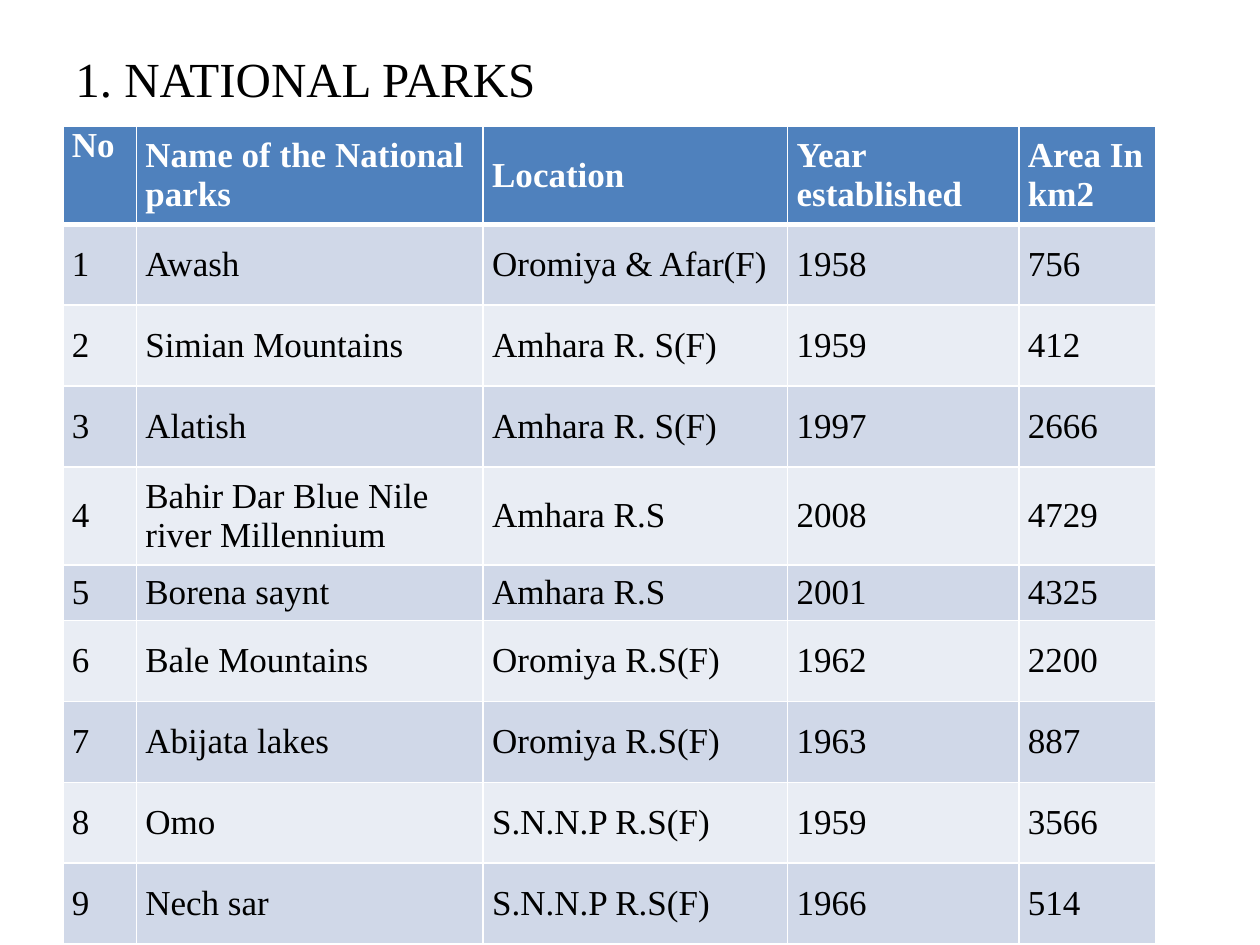
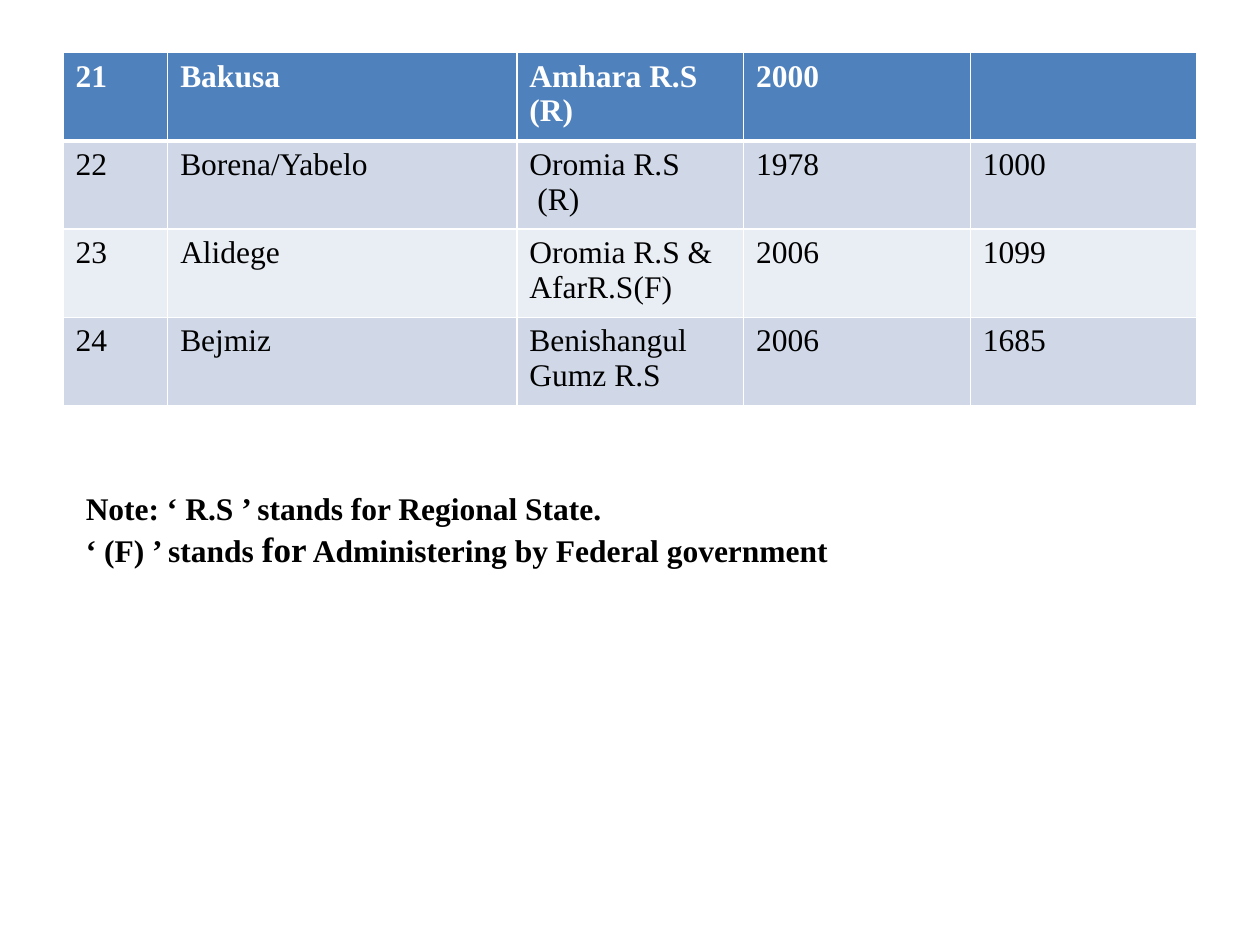
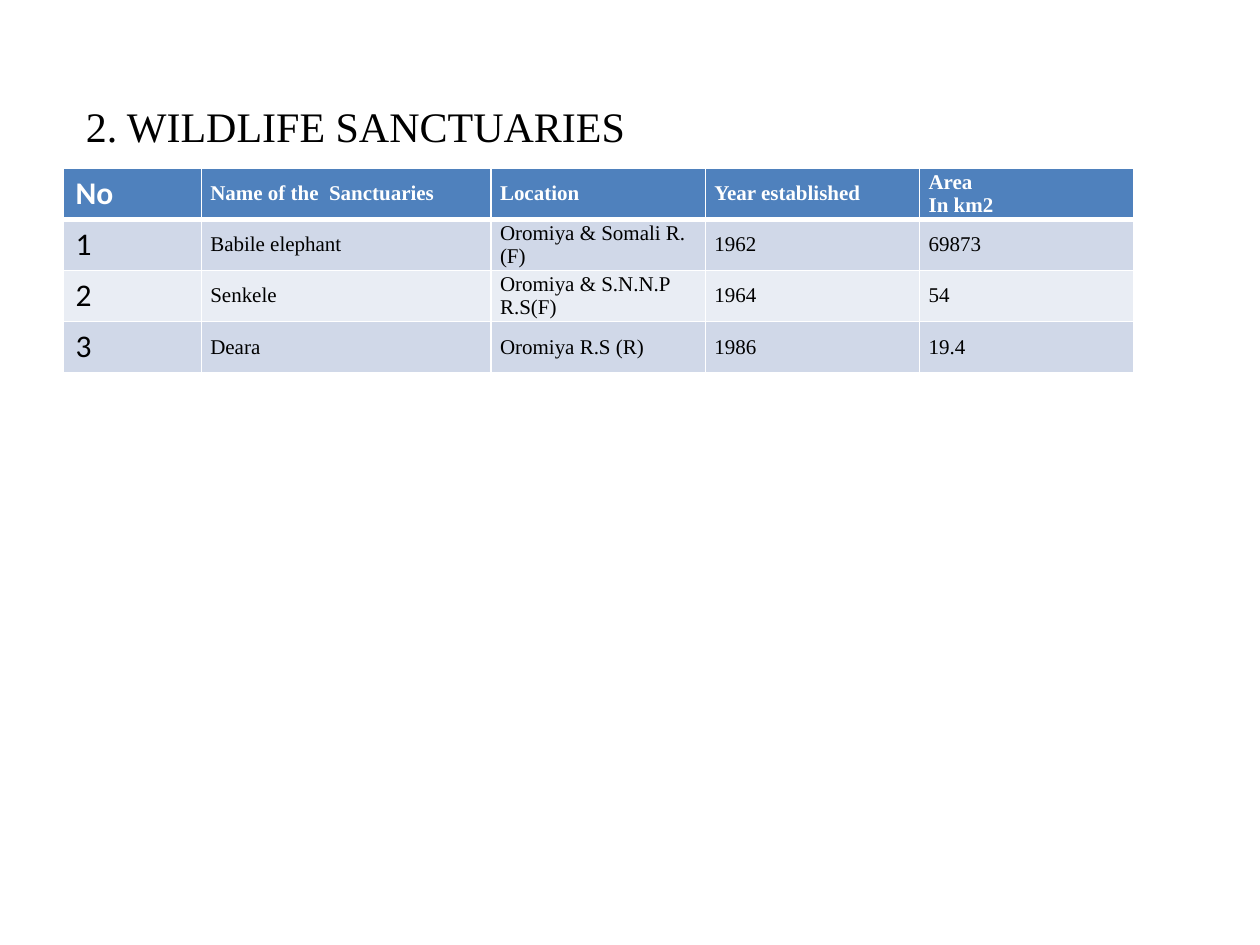
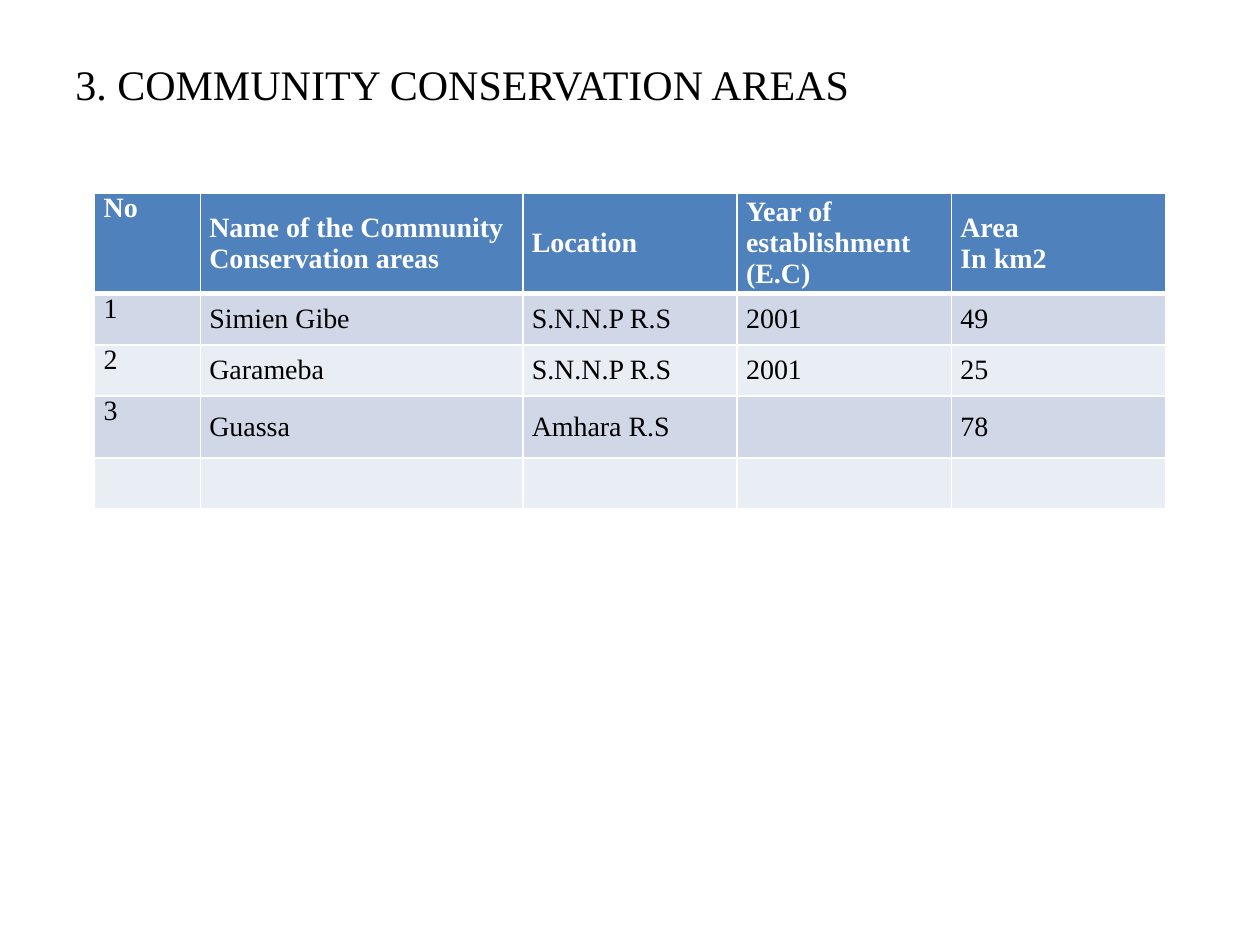
from collections import namedtuple

from lxml import etree
from pptx import Presentation
from pptx import util as u
from pptx.dml.color import RGBColor
from pptx.enum import text
from pptx.oxml import ns

WHITE = RGBColor(0xFF, 0xFF, 0xFF)
BLACK = RGBColor(0x00, 0x00, 0x00)
HEADER = RGBColor(0x4F, 0x81, 0xBD)
BANDS = (RGBColor(0xE9, 0xED, 0xF4), RGBColor(0xD0, 0xD8, 0xE8))
SERIF = "Times New Roman"
SANS = "Calibri"

Box = namedtuple("Box", "x y w h")
Look = namedtuple("Look", "size font tight middle")

PARKS = [
    ("No", "Name of the National parks", "Location", "Year established", "Area In km2"),
    ("1", "Awash", "Oromiya & Afar(F)", "1958", "756"),
    ("2", "Simian Mountains", "Amhara R. S(F)", "1959", "412"),
    ("3", "Alatish", "Amhara R. S(F)", "1997", "2666"),
    ("4", "Bahir Dar Blue Nile river Millennium", "Amhara R.S", "2008", "4729"),
    ("5", "Borena saynt", "Amhara R.S", "2001", "4325"),
    ("6", "Bale Mountains", "Oromiya R.S(F)", "1962", "2200"),
    ("7", "Abijata lakes", "Oromiya R.S(F)", "1963", "887"),
    ("8", "Omo", "S.N.N.P R.S(F)", "1959", "3566"),
    ("9", "Nech sar", "S.N.N.P R.S(F)", "1966", "514"),
]
MORE_PARKS = [
    ("21", "Bakusa", "Amhara R.S (R)", "2000", ""),
    ("22", "Borena/Yabelo", "Oromia R.S\n (R)", "1978", "1000"),
    ("23", "Alidege", "Oromia R.S & AfarR.S(F)", "2006", "1099"),
    ("24", "Bejmiz", "Benishangul Gumz R.S", "2006", "1685"),
]
SANCTUARIES = [
    ("No", "Name of the  Sanctuaries", "Location", "Year established", "Area\vIn km2"),
    ("1", "Babile elephant", "Oromiya & Somali R.(F)", "1962", "69873"),
    ("2", "Senkele", "Oromiya & S.N.N.P R.S(F)", "1964", "54"),
    ("3", "Deara", "Oromiya R.S (R)", "1986", "19.4"),
]
COMMUNITY_AREAS = [
    ("No", "Name of the Community Conservation areas", "Location",
     "Year of establishment\v(E.C)", "Area\vIn km2"),
    ("1", "Simien Gibe", "S.N.N.P R.S", "2001", "49"),
    ("2", "Garameba", "S.N.N.P R.S", "2001", "25"),
    ("3", "Guassa", "Amhara R.S", "", "78"),
    ("",) * 5,
]


def add_run(p, words, size, font=SERIF, color=BLACK, bold=False):
    for i, line in enumerate(words.split("\v")):
        if i:
            p.add_line_break()
        r = p.add_run()
        r.text = line
        r.font.size = u.Pt(size)
        r.font.name = font
        r.font.bold = bold
        r.font.color.rgb = color


def add_text_box(s, box):
    tf = s.shapes.add_textbox(*map(u.Cm, box)).text_frame
    tf.word_wrap = True
    return tf.paragraphs[0]


def add_title(s, box, words, size, hanging=True):
    p = add_text_box(s, box)
    add_run(p, words, size)
    if hanging:
        pPr = p._p.get_or_add_pPr()
        pPr.set("marL", str(u.Cm(0.95)))
        pPr.set("indent", str(u.Cm(-0.95)))
        before = etree.SubElement(pPr, ns.qn("a:spcBef"))
        etree.SubElement(before, ns.qn("a:spcPct")).set("val", "20000")


def add_note(s, box):
    p = add_text_box(s, box)
    add_run(p, "Note: ‘ R.S ’ stands for Regional State.\v‘ (F) ’ stands ", 18, bold=True)
    add_run(p, "for", 20, bold=True)
    add_run(p, " Administering by Federal government", 18, bold=True)


def set_borders(cell, top, bottom):
    tcPr = cell._tc.get_or_add_tcPr()
    for side, width in (("L", 1), ("R", 1), ("T", top), ("B", bottom)):
        ln = etree.SubElement(tcPr, ns.qn("a:ln" + side), w=str(u.Pt(width)))
        fill = etree.SubElement(ln, ns.qn("a:solidFill"))
        etree.SubElement(fill, ns.qn("a:srgbClr"), val=str(WHITE))


def fill_cell(cell, words, look, row):
    set_borders(cell, 3 if row == 1 else 1, 3 if row == 0 else 1)
    cell.fill.solid()
    cell.fill.fore_color.rgb = BANDS[row % 2] if row else HEADER
    if not words:
        return
    if look.tight:
        cell.margin_left = cell.margin_right = u.Cm(0.18)
        cell.margin_top = cell.margin_bottom = 0
    if look.middle:
        cell.vertical_anchor = text.MSO_ANCHOR.MIDDLE
    tf = cell.text_frame
    for i, line in enumerate(words.split("\n")):
        p = tf.add_paragraph() if i else tf.paragraphs[0]
        add_run(p, line, look.size, look.font, BLACK if row else WHITE, row == 0)


def add_grid(s, x, y, cols, heights, data, look, number=None, corner=None):
    number = number or look
    corner = corner or number
    table = s.shapes.add_table(len(data), len(cols), u.Cm(x), u.Cm(y),
                               u.Cm(sum(cols)), u.Cm(sum(heights))).table
    for column, width in zip(table.columns, cols):
        column.width = u.Cm(width)
    for i, (height, record) in enumerate(zip(heights, data)):
        table.rows[i].height = u.Cm(height)
        for j, words in enumerate(record):
            first = number if i else corner
            fill_cell(table.cell(i, j), words, look if j else first, i)


def parks_slide(s):
    look = Look(20, SERIF, True, True)
    add_title(s, Box(1.27, 0.85, 22.86, 16.18), "1. NATIONAL PARKS", 28)
    heights = [1.98] + [1.63] * 3 + [1.98, 1.12] + [1.63] * 4
    add_grid(s, 1.27, 2.54, [1.48, 6.99, 6.14, 4.66, 2.75], heights, PARKS,
             look, corner=look._replace(middle=False))


def more_parks_slide(s):
    add_grid(s, 1.27, 1.06, [2.11, 7.04] + [4.57] * 3, [1.65] * 4, MORE_PARKS,
             Look(18, SERIF, False, False))
    add_note(s, Box(1.48, 9.74, 15.88, 1.88))


def sanctuaries_slide(s):
    add_grid(s, 1.27, 3.39, [2.79, 5.84] + [4.32] * 3, [1.03] * 4, SANCTUARIES,
             Look(12, SERIF, True, True), number=Look(18, SANS, False, False))
    add_title(s, Box(1.48, 1.91, 16.09, 1.27), "2. WILDLIFE SANCTUARIES", 24, hanging=False)


def community_slide(s):
    look = Look(16, SERIF, True, True)
    add_title(s, Box(1.27, 1.06, 22.86, 15.95), "3. COMMUNITY CONSERVATION AREAS", 24)
    add_grid(s, 1.91, 3.89, [2.13, 6.5] + [4.32] * 3, [1.88, 1.03, 1.03, 1.25, 1.03],
             COMMUNITY_AREAS, look, number=look._replace(middle=False))


def main():
    prs = Presentation()
    prs.slide_width = u.Cm(25.4)
    prs.slide_height = u.Cm(19.05)
    for build in (parks_slide, more_parks_slide, sanctuaries_slide, community_slide):
        build(prs.slides.add_slide(prs.slide_layouts[6]))
    prs.save("out.pptx")


if __name__ == "__main__":
    main()
